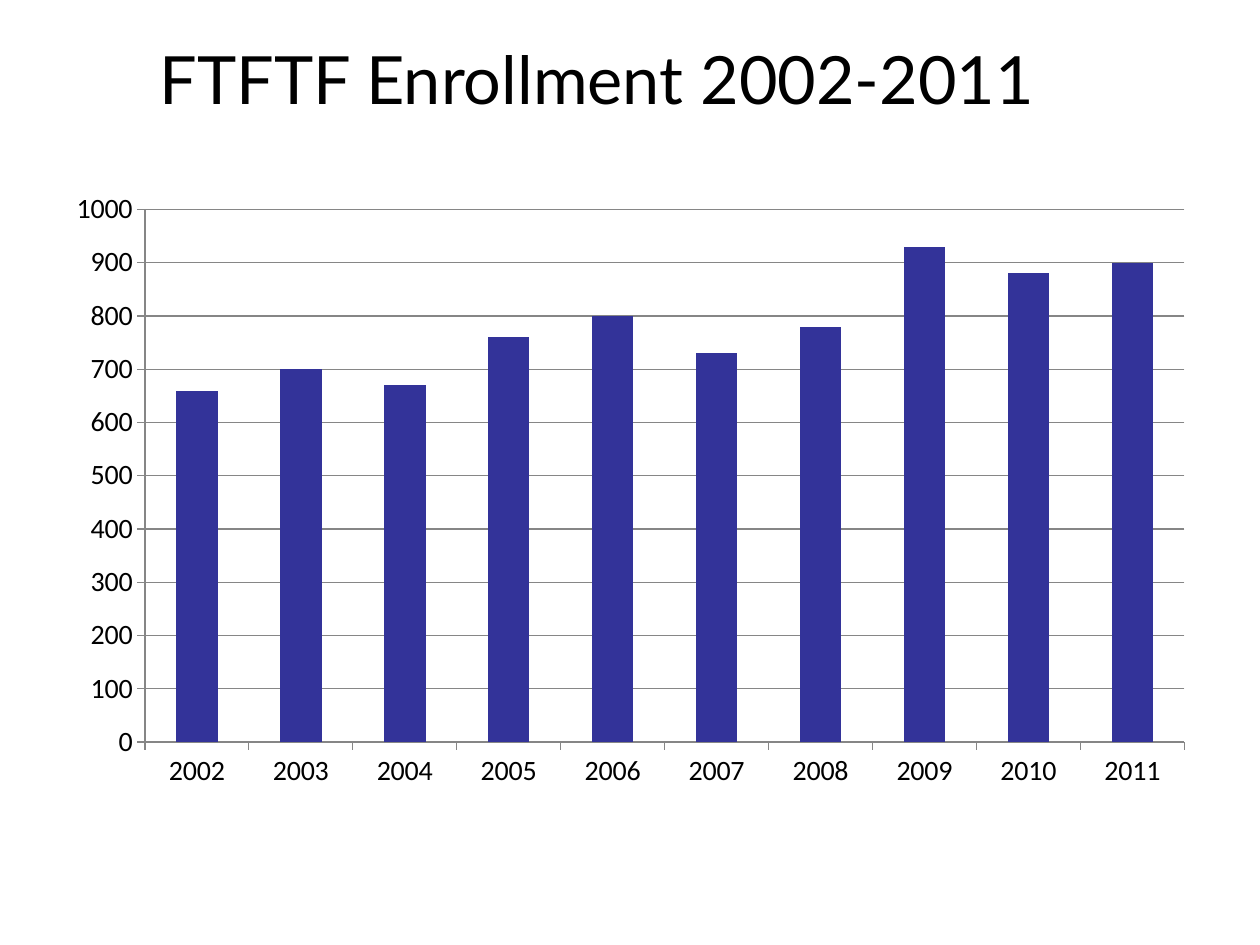
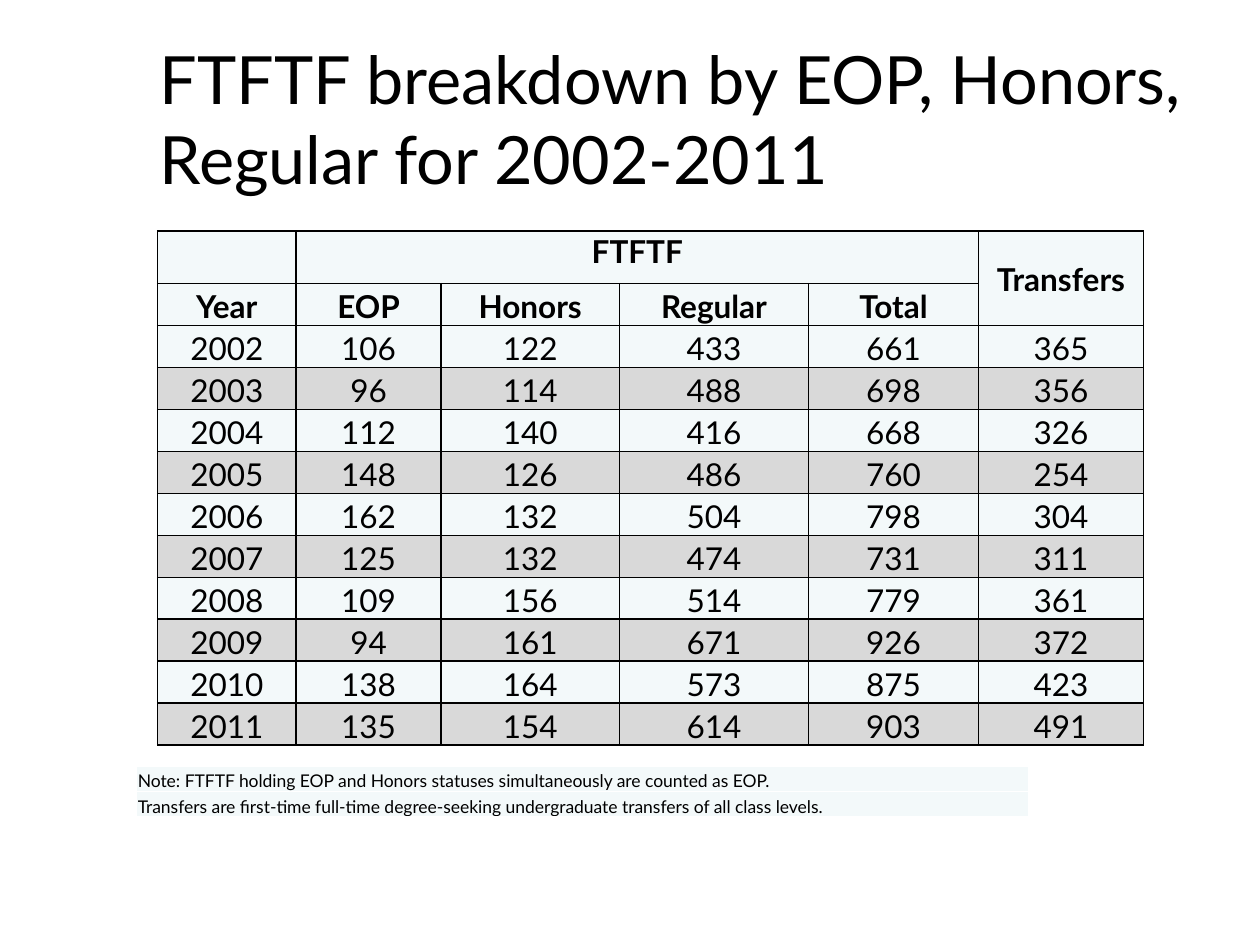
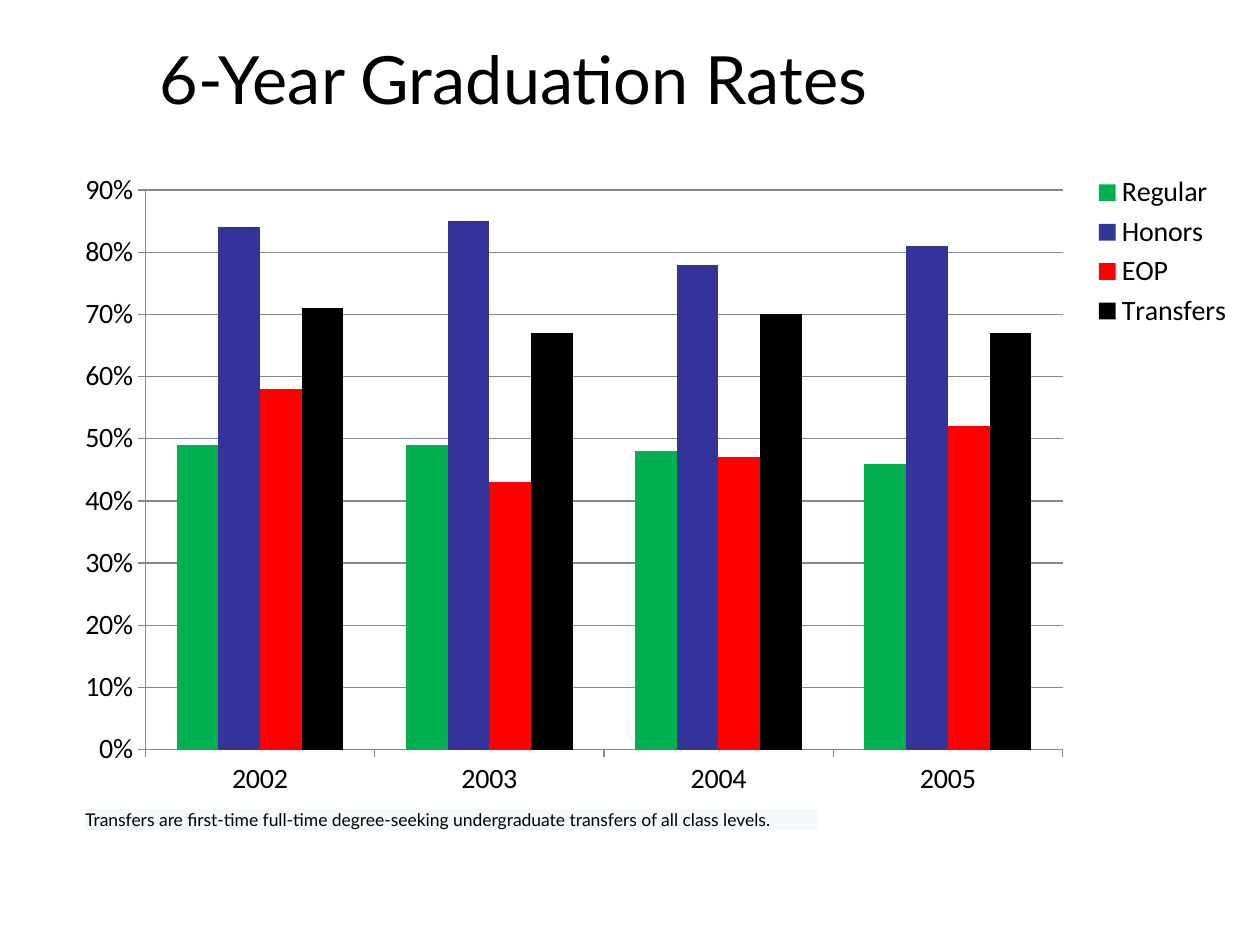
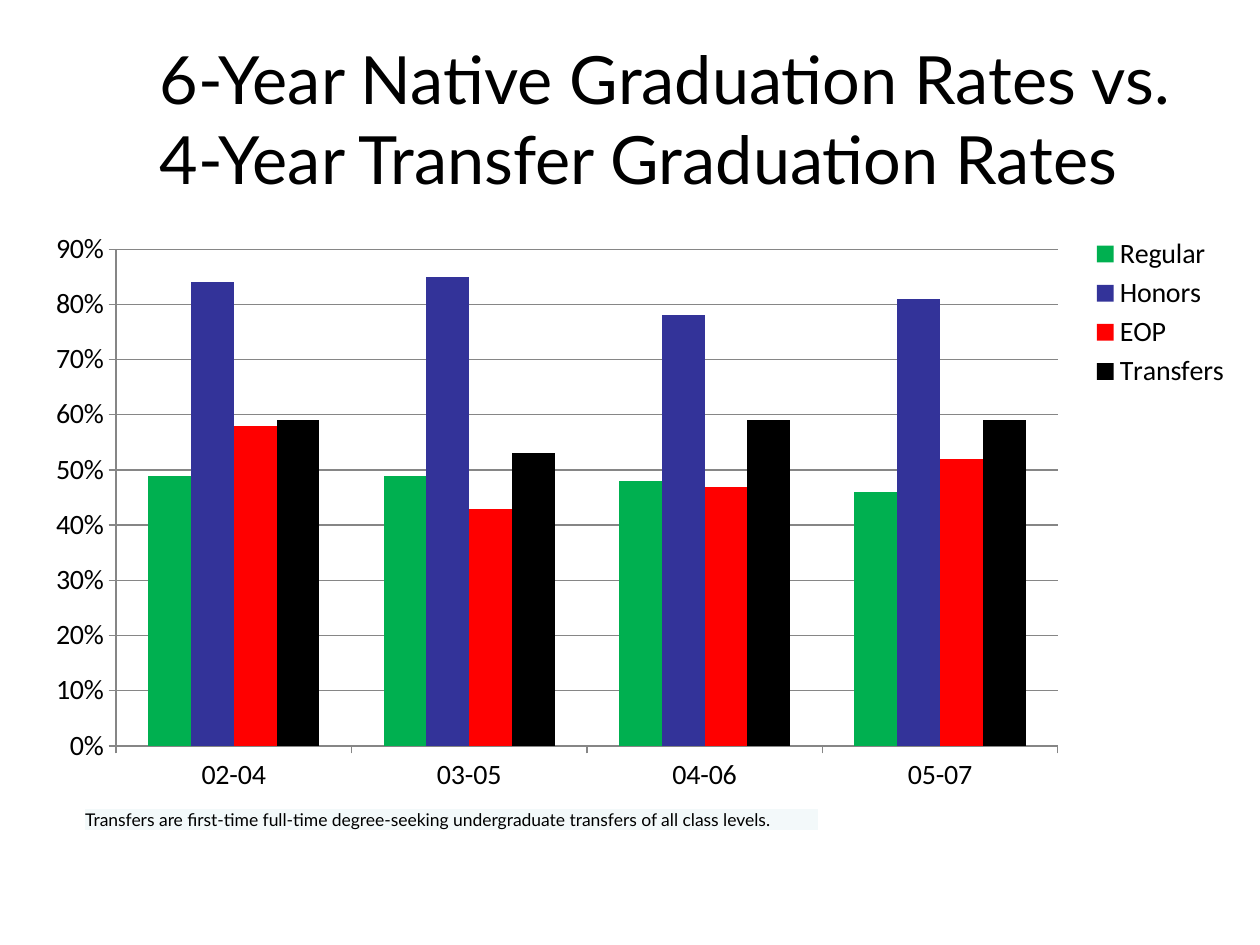
import dataclasses

import pptx
import pptx.chart.data
import pptx.dml.color
import pptx.enum.chart
import pptx.enum.text
import pptx.oxml
import pptx.oxml.ns
import pptx.util


@dataclasses.dataclass(frozen=True)
class Theme:
    text_font: str = "Lato"
    chart_font: str = "Calibri"
    title_size: int = 38
    table_size: int = 18
    chart_size: int = 16
    note_size: int = 10
    ink: str = "000000"
    paper: str = "FFFFFF"
    pale: str = "F3F9FA"
    band: str = "D9D9D9"
    grid: str = "868686"
    blue: str = "333399"
    green: str = "00B050"
    red: str = "FF0000"


THEME = Theme()
ANCHOR = pptx.enum.text.MSO_ANCHOR
ALIGN = pptx.enum.text.PP_ALIGN

# The slide is a grid of 120 columns and 90 rows, twelve to the inch
COLUMNS, ROWS = 120, 90
UNIT = pptx.util.Inches(10) / COLUMNS

TRANSFER_NOTE = ("Transfers are first-time full-time degree-seeking "
                 "undergraduate transfers of all class levels.")

# Year: EOP, Honors, Regular, Total, Transfers
ENROLLMENT = {
    2002: (106, 122, 433, 661, 365),
    2003: (96, 114, 488, 698, 356),
    2004: (112, 140, 416, 668, 326),
    2005: (148, 126, 486, 760, 254),
    2006: (162, 132, 504, 798, 304),
    2007: (125, 132, 474, 731, 311),
    2008: (109, 156, 514, 779, 361),
    2009: (94, 161, 671, 926, 372),
    2010: (138, 164, 573, 875, 423),
    2011: (135, 154, 614, 903, 491),
}
NATIVE_RATES = [
    ("Regular", (0.49, 0.49, 0.48, 0.46), THEME.green),
    ("Honors", (0.84, 0.85, 0.78, 0.81), THEME.blue),
    ("EOP", (0.58, 0.43, 0.47, 0.52), THEME.red),
]


def units(count):
    return pptx.util.Emu(round(count * UNIT))


def place(box):
    return [units(length) for length in box]


def color(code):
    return pptx.dml.color.RGBColor.from_string(code)


def style_font(font, name, size, bold=False):
    font.name, font.size, font.bold = name, pptx.util.Pt(size), bold
    font.color.rgb = color(THEME.ink)


def add_span(para, text, size, bold=False):
    span = para.add_run()
    span.text = text
    style_font(span.font, THEME.text_font, size, bold)


# Titles

def add_page(deck, title, width=102):
    page = deck.slides.add_slide(deck.slide_layouts.get_by_name("Title Only"))
    holder = page.shapes.title
    holder.left, holder.top, holder.width, holder.height = place((14, 3, width, 15))
    frame = holder.text_frame
    frame.word_wrap = True
    frame.auto_size = pptx.enum.text.MSO_AUTO_SIZE.NONE
    frame.vertical_anchor = ANCHOR.TOP
    para = frame.paragraphs[0]
    para.alignment = ALIGN.LEFT
    add_span(para, title, THEME.title_size)
    return page


# Tables

def add_plain_table(page, left, top, widths, heights):
    box = (left, top, sum(widths), sum(heights))
    table = page.shapes.add_table(len(heights), len(widths), *place(box)).table
    table.first_row = table.horz_banding = False
    for column, width in zip(table.columns, widths):
        column.width = units(width)
    for row, height in zip(table.rows, heights):
        row.height = units(height)
    return table


def style_cell(cell, fill, border):
    properties = cell._tc.get_or_add_tcPr()
    for side in ("lnL", "lnR", "lnT", "lnB"):
        properties.append(pptx.oxml.parse_xml(
            f'<a:{side} {pptx.oxml.ns.nsdecls("a")} w="12700"><a:solidFill>'
            f'<a:srgbClr val="{border}"/></a:solidFill></a:{side}>'))
    cell.fill.solid()
    cell.fill.fore_color.rgb = color(fill)


def write_cell(cell, text, size, bold=False, align=ALIGN.CENTER, anchor=ANCHOR.BOTTOM):
    cell.margin_left = cell.margin_right = cell.margin_top = pptx.util.Inches(0.01)
    cell.margin_bottom = 0
    cell.vertical_anchor = anchor
    para = cell.text_frame.paragraphs[0]
    para.alignment = align
    add_span(para, text, size, bold)


def add_notes(page, left, top, width, height, lines):
    table = add_plain_table(page, left, top, [width], [height] * len(lines))
    for cell, line in zip(table.iter_cells(), lines):
        style_cell(cell, THEME.pale, THEME.paper)
        write_cell(cell, line, THEME.note_size, align=ALIGN.LEFT)


def add_enrollment_table(page, left, top):
    table = add_plain_table(page, left, top, [13.2, 13.8, 17, 18, 16.2, 15.7],
                            [5] + [4] * (len(ENROLLMENT) + 1))
    for index, row in enumerate(table.rows):
        fill = THEME.band if index > 2 and index % 2 else THEME.pale
        for cell in row.cells:
            style_cell(cell, fill, THEME.ink)

    # Two header rows with merged group heads
    table.cell(0, 1).merge(table.cell(0, 4))
    table.cell(0, 5).merge(table.cell(1, 5))
    size = THEME.table_size
    write_cell(table.cell(0, 1), "FTFTF", size, True, anchor=ANCHOR.TOP)
    write_cell(table.cell(0, 5), "Transfers", size, True, anchor=ANCHOR.MIDDLE)
    for column, head in enumerate(("Year", "EOP", "Honors", "Regular", "Total")):
        write_cell(table.cell(1, column), head, size, True)

    # One row for each year
    for row, (year, counts) in enumerate(ENROLLMENT.items(), start=2):
        for column, value in enumerate((year, *counts)):
            write_cell(table.cell(row, column), str(value), size)


# Charts

def set_layout(parent, position, shares, inner=False):
    """Fix a chart part at shares (left, top, width, height) of the chart."""
    old = parent.find(pptx.oxml.ns.qn("c:layout"))
    if old is not None:
        parent.remove(old)
    target = '<c:layoutTarget val="inner"/>' if inner else ""
    modes = '<c:xMode val="edge"/><c:yMode val="edge"/>'
    lengths = "".join(f'<c:{key} val="{share}"/>' for key, share in zip("xywh", shares))
    parent.insert(position, pptx.oxml.parse_xml(
        f'<c:layout {pptx.oxml.ns.nsdecls("c")}><c:manualLayout>'
        f'{target}{modes}{lengths}</c:manualLayout></c:layout>'))


def add_column_chart(page, box, categories, series, plot_shares, top_value, step,
                     number_format="General", legend_shares=None):
    data = pptx.chart.data.CategoryChartData(number_format=number_format)
    data.categories = categories
    for name, values, _ in series:
        data.add_series(name, values)
    chart = page.shapes.add_chart(
        pptx.enum.chart.XL_CHART_TYPE.COLUMN_CLUSTERED, *place(box), data).chart
    chart.has_title = False
    style_font(chart.font, THEME.chart_font, THEME.chart_size)

    # Columns
    plot = chart.plots[0]
    plot.gap_width, plot.overlap = 150, 0
    plot.vary_by_categories = False
    for bars, (_, _, fill) in zip(plot.series, series):
        bars.format.fill.solid()
        bars.format.fill.fore_color.rgb = color(fill)

    # Axes and gridlines
    scale = chart.value_axis
    scale.minimum_scale, scale.maximum_scale, scale.major_unit = 0, top_value, step
    scale.has_major_gridlines = True
    scale.tick_labels.number_format = number_format
    scale.tick_labels.number_format_is_linked = False
    for axis in (chart.category_axis, scale):
        axis.major_tick_mark = pptx.enum.chart.XL_TICK_MARK.OUTSIDE
        style_font(axis.tick_labels.font, THEME.chart_font, THEME.chart_size)
    for lined in (chart.category_axis, scale, scale.major_gridlines):
        lined.format.line.color.rgb = color(THEME.grid)
        lined.format.line.width = pptx.util.Pt(0.75)
    plot_area = chart.element.find(".//" + pptx.oxml.ns.qn("c:plotArea"))
    set_layout(plot_area, 0, plot_shares, inner=True)

    # Legend
    chart.has_legend = legend_shares is not None
    if chart.has_legend:
        legend = chart.legend
        legend.position = pptx.enum.chart.XL_LEGEND_POSITION.RIGHT
        legend.include_in_layout = False
        style_font(legend.font, THEME.chart_font, THEME.chart_size)
        legend_part = chart.element.find(".//" + pptx.oxml.ns.qn("c:legend"))
        set_layout(legend_part, 1, legend_shares)


def add_rate_chart(page, box, categories, transfers, legend_height):
    series = NATIVE_RATES + [("Transfers", transfers, THEME.ink)]
    add_column_chart(page, box, categories, series, (0.07, 0.05, 0.78, 0.86),
                     0.9, 0.1, "0%", (0.87, 0.02, 0.13, legend_height))


# Slides

def add_enrollment_page(deck):
    page = add_page(deck, "FTFTF Enrollment 2002-2011")
    totals = (660, 700, 670, 760, 800, 730, 780, 930, 880, 900)
    add_column_chart(page, (5, 17, 110, 59), [str(year) for year in ENROLLMENT],
                     [("Series 1", totals, THEME.blue)],
                     (0.08, 0.05, 0.9, 0.86), 1000, 100)


def add_breakdown_page(deck):
    page = add_page(deck, "FTFTF breakdown by EOP, Honors, Regular for 2002-2011")
    add_notes(page, 13, 73, 85, 2.4, [
        "Note: FTFTF holding EOP and Honors statuses simultaneously are counted as EOP.",
        TRANSFER_NOTE])
    add_enrollment_table(page, 15, 22)


def add_rates_page(deck, title, title_width, box, categories, transfers, legend_height):
    page = add_page(deck, title, title_width)
    add_rate_chart(page, box, categories, transfers, legend_height)
    add_notes(page, 8, 77, 70, 2, [TRANSFER_NOTE])


def main():
    deck = pptx.Presentation()
    deck.slide_width, deck.slide_height = units(COLUMNS), units(ROWS)
    add_enrollment_page(deck)
    add_breakdown_page(deck)
    add_rates_page(deck, "6-Year Graduation Rates", 102, (6, 15, 112, 62),
                   ["2002", "2003", "2004", "2005"], (0.71, 0.67, 0.7, 0.67), 0.25)
    add_rates_page(deck, "6-Year Native Graduation Rates vs. 4-Year Transfer Graduation Rates",
                   105, (3, 21, 115, 55),
                   ["02-04", "03-05", "04-06", "05-07"], (0.59, 0.53, 0.59, 0.59), 0.28)
    deck.save("out.pptx")


if __name__ == "__main__":
    main()
